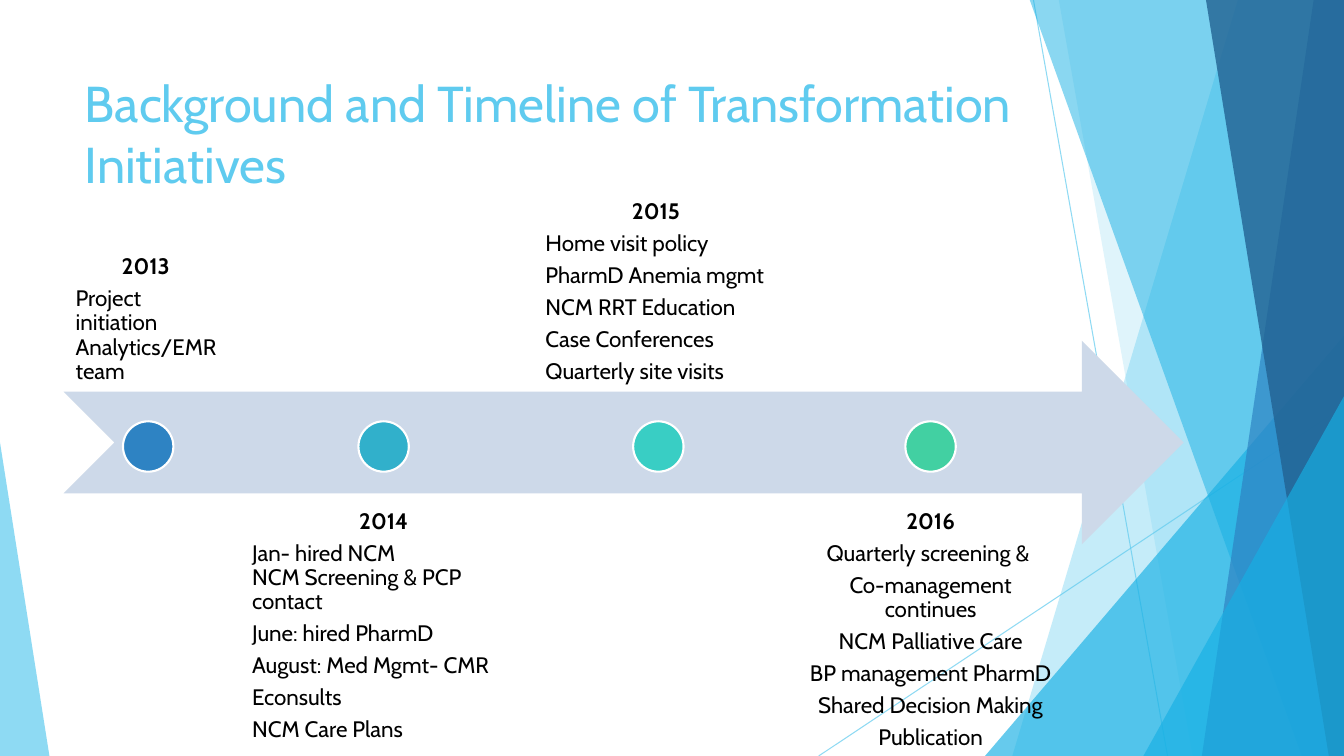
"""Build a slide with a timeline of transformation initiatives from 2013 to 2016."""
from lxml.etree import SubElement
from pptx import Presentation
from pptx.dml.color import RGBColor
from pptx.enum.shapes import MSO_CONNECTOR as Link, MSO_SHAPE as Kind
from pptx.enum.text import MSO_ANCHOR as Anchor, PP_ALIGN as Align
from pptx.oxml.ns import qn
from pptx.util import Inches, Pt


def paint(fill, tone, host=None, alpha=100):
    fill.solid()
    fill.fore_color.rgb = RGBColor.from_string(tone)
    if alpha < 100:
        node = next(host.element.iter(qn("a:srgbClr")))
        SubElement(node, qn("a:alpha"), val=str(alpha * 1000))


def write(para, text, size=16, tone="000000", bold=False, align=Align.LEFT, lead=0.9, after=5.6):
    para.text = text
    para.alignment = align
    para.line_spacing = lead
    para.space_after = Pt(after)
    for gap in para._p.iter(qn("a:br")):
        SubElement(gap, qn("a:rPr"), sz=str(size * 100))
    for run in para.runs:
        run.font.name = "Cabin"
        run.font.size = Pt(size)
        run.font.bold = bold
        paint(run.font.fill, tone)


deck = Presentation()
deck.slide_width, deck.slide_height = Inches(13.33), Inches(7.5)
slide = deck.slides.add_slide(deck.slide_layouts[5])
shapes = slide.shapes

rays = [(10.25, 0, 11.58, 7.5), (13.33, 4.03, 8.12, 7.5)]
for ray in rays:
    line = shapes.add_connector(Link.STRAIGHT, *map(Inches, ray))
    paint(line.line.fill, "5FCBEF", line, 70)
    line.line.width = Pt(0.75)
    SubElement(line.element.spPr, qn("a:effectLst"))

# Bands give top and bottom x of the left edge; wedges give a box and the tip position.
facets = [
    ((12.28, 10.04), "5FCBEF", 36),
    ((10.5, 11.83), "5FCBEF", 20),
    ((9.77, 3.33, 3.56, 4.17, 1), "17B0E4", 66),
    ((10.21, 12.91), "17B0E4", 50),
    ((13.03, 11.92), "2E83C3", 70),
    ((11.96, 13.18), "226292", 80),
    ((11.34, 3.93, 1.99, 3.57, 1), "17B0E4", 66),
    ((0, 4.39, 0.49, 3.11, 0), "5FCBEF", 70),
]
for form, tone, alpha in facets:
    if len(form) == 2:
        top, base = form
        pen = shapes.build_freeform(Inches(top), Inches(-0.01))
        spots = [(13.33, -0.01), (13.33, 7.5), (base, 7.5)]
        pen.add_line_segments([(Inches(x), Inches(y)) for x, y in spots])
        facet = pen.convert_to_shape()
    else:
        facet = shapes.add_shape(Kind.ISOSCELES_TRIANGLE, *map(Inches, form[:4]))
        facet.adjustments[0] = form[4]
    paint(facet.fill, tone, facet, alpha)
    facet.line.fill.background()
    facet.shadow.inherit = False

title = shapes.title
title.left, title.top, title.width, title.height = map(Inches, (0.74, 0.67, 9.4, 1.44))
title.text_frame.word_wrap = True
title.text_frame.vertical_anchor = Anchor.TOP
write(title.text_frame.paragraphs[0], "Background and Timeline of Transformation Initiatives",
      size=36, tone="5FCBEF", lead=1.0, after=0)

arrow = shapes.add_shape(Kind.NOTCHED_RIGHT_ARROW, *map(Inches, (0.63, 3.38, 11.11, 2.02)))
paint(arrow.fill, "CDD9E9")
arrow.line.fill.background()
arrow.shadow.inherit = False

above, below = (1.91, Anchor.BOTTOM), (4.94, Anchor.TOP)
years = [
    ("2013 ", 0.63, 1.68, above, "2E83C3", Align.LEFT,
     ["Project initiation\vAnalytics/EMR team"]),
    ("2014", 2.38, 2.85, below, "31B0CB", Align.LEFT,
     ["Jan- hired NCM\vNCM Screening & PCP contact", "June: hired PharmD",
      "August: Med Mgmt- CMR", "Econsults", "NCM Care Plans"]),
    ("2015 ", 5.29, 2.48, above, "39CEC4", Align.LEFT,
     ["Home visit policy", "PharmD Anemia mgmt", "NCM RRT Education",
      "Case Conferences", "Quarterly site visits"]),
    ("2016", 7.84, 2.78, below, "42D0A2", Align.CENTER,
     ["Quarterly screening & ", "Co-management continues", "NCM Palliative Care",
      "BP management PharmD", "Shared Decision Making", "Publication"]),
]
size = 0.5
for year, left, wide, (top, anchor), tone, align, items in years:
    box = shapes.add_textbox(*map(Inches, (left, top, wide, 2.02)))
    frame = box.text_frame
    frame.word_wrap = True
    frame.vertical_anchor = anchor
    frame.margin_left = frame.margin_right = Inches(0.12)
    frame.margin_top = frame.margin_bottom = Inches(0.12)
    write(frame.paragraphs[0], year, bold=True, align=Align.CENTER)
    for item in items:
        write(frame.add_paragraph(), item, align=align)

    mid = left + wide / 2
    dot = shapes.add_shape(Kind.OVAL, *map(Inches, (mid - size / 2, 4.18, size, size)))
    paint(dot.fill, tone)
    paint(dot.line.fill, "FFFFFF")
    dot.line.width = Pt(1.5)
    dot.shadow.inherit = False

deck.save("out.pptx")
